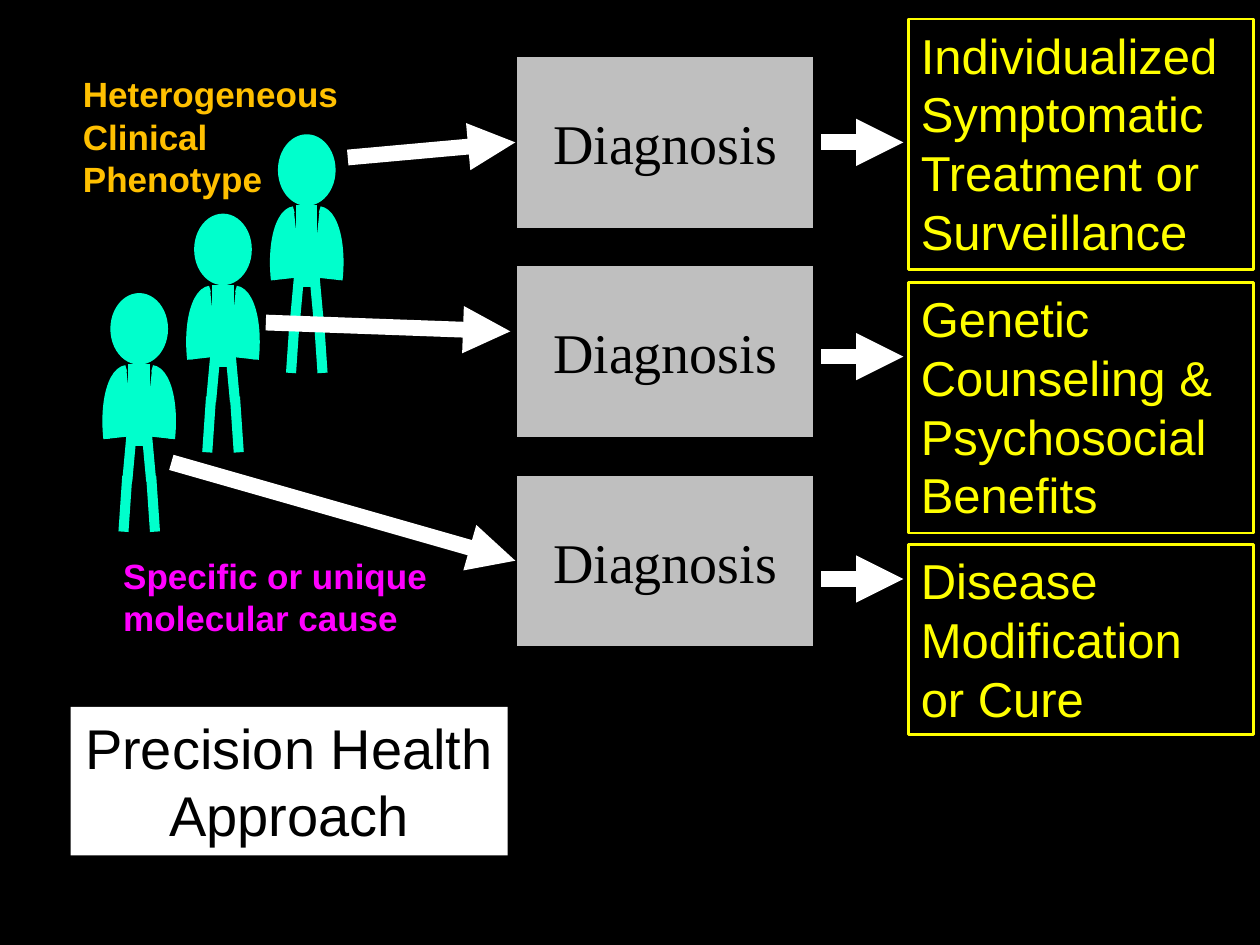
import pptx
import pptx.util
import pptx.dml.color
import pptx.enum.shapes
import pptx.enum.text
import pptx.oxml
import pptx.oxml.ns

SHAPE = pptx.enum.shapes.MSO_SHAPE
ALIGN = pptx.enum.text.PP_ALIGN
ANCHOR = pptx.enum.text.MSO_ANCHOR
COLORS = {"ground": "000000", "person": "00FFCC", "arrow": "FFFFFF",
          "diagnosis": "BFBFBF", "phenotype": "FFC000", "cause": "FF00FF",
          "outcome": "FFFF00", "panel": "FFFFFF", "ink": "000000"}
COLUMNS, ROWS = 100, 75


def rgb(name):
    return pptx.dml.color.RGBColor.from_string(COLORS[name])


class Board:
    """Style and current slide; places are given in columns and rows."""

    def __init__(self, deck):
        self.column = deck.slide_width / COLUMNS
        self.row = deck.slide_height / ROWS
        self.slide = deck.slides.add_slide(deck.slide_layouts[5])
        self.slide.background.fill.solid()
        self.slide.background.fill.fore_color.rgb = rgb("ground")

    def across(self, columns):
        return round(columns * self.column)

    def down(self, rows):
        return round(rows * self.row)

    def place(self, box):
        left, top, width, height = box
        return self.across(left), self.down(top), self.across(width), self.down(height)

    def shape(self, kind, box, fill=None, line=None, weight=1.5, parent=None):
        item = (parent or self.slide).shapes.add_shape(kind, *self.place(box))
        item.shadow.inherit = False
        if fill:
            item.fill.solid()
            item.fill.fore_color.rgb = rgb(fill)
        else:
            item.fill.background()
        item.line.color.rgb = rgb(line)
        item.line.width = pptx.util.Pt(weight)
        return item

    def line(self, start, end, color, weight, head=False, parent=None):
        item = (parent or self.slide).shapes.add_connector(
            pptx.enum.shapes.MSO_CONNECTOR.STRAIGHT,
            self.across(start[0]), self.down(start[1]),
            self.across(end[0]), self.down(end[1]))
        item.line.color.rgb = rgb(color)
        item.line.width = pptx.util.Pt(weight)
        properties = item._element.spPr
        if head:
            properties.find(pptx.oxml.ns.qn("a:ln")).append(pptx.oxml.parse_xml(
                f'<a:tailEnd {pptx.oxml.ns.nsdecls("a")} type="triangle"/>'))
        properties.append(pptx.oxml.parse_xml(
            f'<a:effectLst {pptx.oxml.ns.nsdecls("a")}/>'))
        return item

    def add_words(self, item, paragraphs, size, color, font="Arial", bold=False,
                  align=ALIGN.LEFT, anchor=ANCHOR.TOP, wrap=True):
        frame = item.text_frame
        frame.word_wrap = wrap
        frame.auto_size = pptx.enum.text.MSO_AUTO_SIZE.NONE
        frame.vertical_anchor = anchor
        for number, words in enumerate(paragraphs):
            paragraph = frame.add_paragraph() if number else frame.paragraphs[0]
            paragraph.alignment = align
            run = paragraph.add_run()
            run.text = words
            run.font.name, run.font.size = font, pptx.util.Pt(size)
            run.font.bold = bold
            run.font.color.rgb = rgb(color)

    def label(self, box, paragraphs, color):
        item = self.slide.shapes.add_textbox(*self.place(box))
        self.add_words(item, paragraphs, 20, color, bold=True, wrap=False)

    def title(self, box, paragraphs):
        item = self.slide.shapes.title
        item.left, item.top, item.width, item.height = self.place(box)
        item.fill.solid()
        item.fill.fore_color.rgb = rgb("panel")
        self.add_words(item, paragraphs, 32, "ink", align=ALIGN.CENTER, wrap=False)

    def person(self, center, top):
        body = self.slide.shapes.add_group_shape()
        self.shape(SHAPE.OVAL, (center - 2.15, top, 4.3, 5.4),
                   "person", "person", 2, body)
        self.line((center, top + 5.5), (center, top + 12), "person", 12.25, parent=body)
        for side in (1, -1):
            arm = self.shape(SHAPE.ARC, (center + side * 0.45 - 2.15, top + 5.8, 4.3, 10.8),
                             "person", "person", 3.75, body)
            arm.rotation = side * 6.2
            if side < 0:
                arm._element.spPr.xfrm.set("flipH", "1")
            # Thigh, then shin
            for low, high, start in ((0.95, 0.55, 14.8), (1.25, 0.95, 18.8)):
                self.line((center + side * low, top + start),
                          (center + side * high, top + start - 4.4),
                          "person", 5.75, parent=body)


def main():
    deck = pptx.Presentation()
    deck.slide_width, deck.slide_height = pptx.util.Inches(10), pptx.util.Inches(7.5)
    board = Board(deck)

    # Patients, front to back
    for step in range(3):
        board.person(11.05 + 6.65 * step, 23.4 - 6.3 * step)

    # Diagnoses, each with the arrow from its patient
    patient_arrows = (((27.6, 12.5), None), ((21.1, 25.6), (40.5, 26.3)),
                      ((13.6, 36.7), None))
    for step, (start, end) in enumerate(patient_arrows):
        top = 4.4 + 16.6 * step
        diagnosis = board.shape(SHAPE.RECTANGLE, (40.9, top, 23.8, 13.8),
                                "diagnosis", "ground", 2)
        board.add_words(diagnosis, ["Diagnosis"], 32, "ink", "Times New Roman",
                        align=ALIGN.CENTER, anchor=ANCHOR.MIDDLE)
        arrow = board.line(start, end or (40.9, top + 6.9), "arrow", 9, head=True)
        if end is None:
            arrow.end_connect(diagnosis, 1)

    # Outcomes, each with its arrow
    outcomes = (
        (1.5, 19.9, 11.3, ["Individualized", "Symptomatic", "Treatment or Surveillance"]),
        (22.4, 19.9, 28.3, ["Genetic Counseling & Psychosocial Benefits"]),
        (43.2, 15.1, 45.95, ["Disease Modification", "or Cure"]))
    for top, height, arrow_row, paragraphs in outcomes:
        board.line((65.2, arrow_row), (71.7, arrow_row), "arrow", 9, head=True)
        outcome = board.shape(SHAPE.RECTANGLE, (72.1, top, 27.4, height), line="outcome")
        board.add_words(outcome, paragraphs, 28, "outcome")

    # Captions and title
    board.label((5.6, 5.3, 23.2, 11.1), ["Heterogeneous", "Clinical", "Phenotype"],
                "phenotype")
    board.label((8.8, 43.5, 26.3, 7.7), ["Specific or unique", "molecular cause"], "cause")
    board.title((5.6, 56.1, 34.7, 11.8), ["Precision Health", "Approach"])

    deck.save("out.pptx")


if __name__ == "__main__":
    main()
